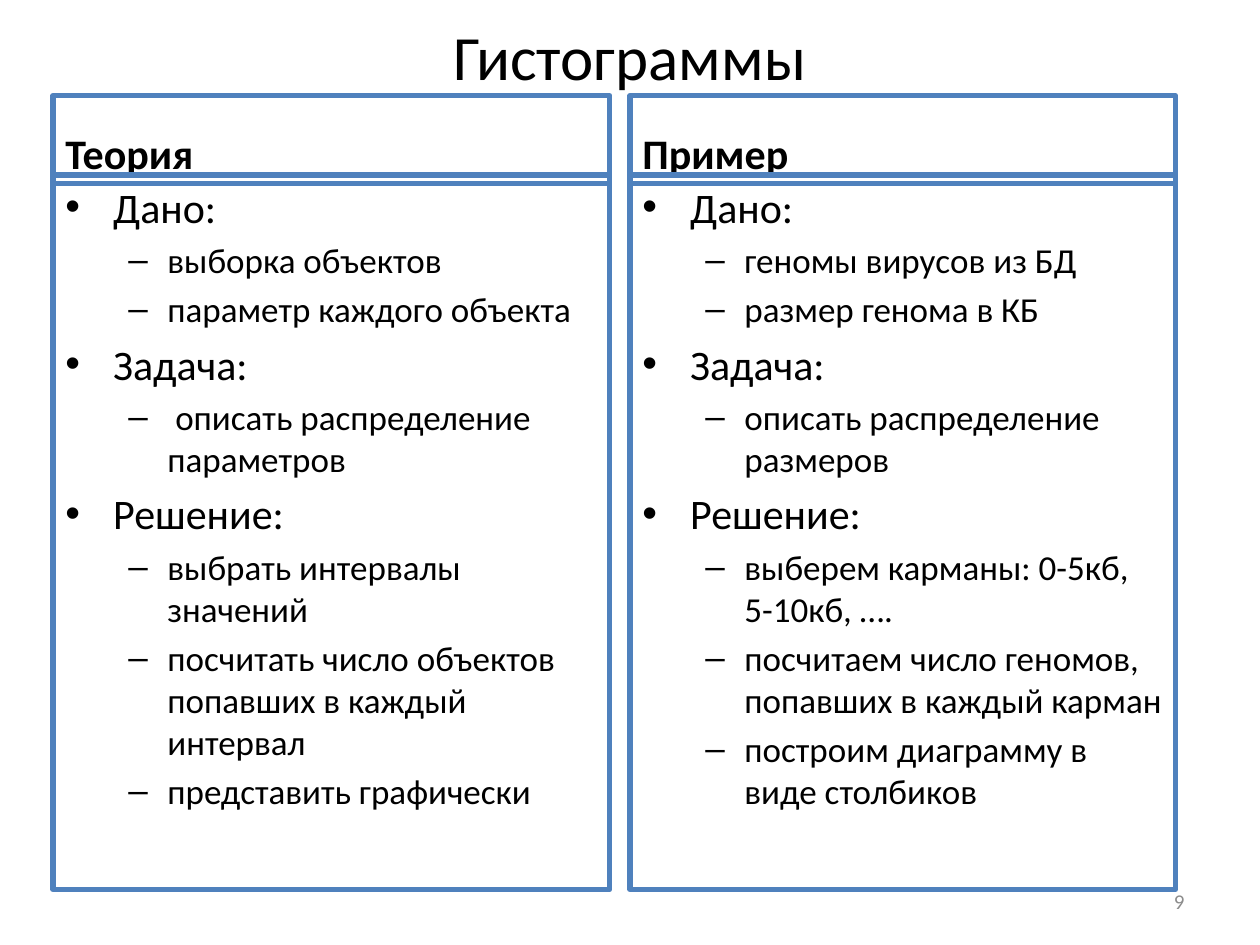
"""Build a slide comparing the theory of histograms with an example."""
from lxml.etree import SubElement
from pptx import Presentation
from pptx.dml.color import RGBColor
from pptx.enum.shapes import MSO_SHAPE
from pptx.enum.text import MSO_ANCHOR, PP_ALIGN
from pptx.oxml.ns import qn
from pptx.util import Inches, Pt

BLACK = RGBColor(0, 0, 0)
BLUE = RGBColor(0x4F, 0x81, 0xBD)
GRAY = RGBColor(0x8C, 0x8C, 0x8C)
FONT = "Calibri"

TITLE = "Гистограммы"
PAGE_NUMBER = "9"
COLUMNS = [
    (0.42, 4.42, "Теория", [
        ("Дано:", ["выборка объектов", "параметр каждого объекта"]),
        ("Задача:", [" описать распределение параметров"]),
        ("Решение:", [
            "выбрать интервалы значений",
            "посчитать число объектов попавших в каждый интервал",
            "представить графически",
        ]),
    ]),
    (5, 4.33, "Пример", [
        ("Дано:", ["геномы вирусов из БД", "размер генома в КБ"]),
        ("Задача:", ["описать распределение размеров"]),
        ("Решение:", [
            "выберем карманы: 0-5кб, 5-10кб, ….",
            "посчитаем число геномов, попавших в каждый карман",
            "построим диаграмму в виде столбиков",
        ]),
    ]),
]
HEADER_ROW = (0.76, 0.7)
BODY_ROW = (1.39, 5.67)
LEVELS = [("•", 24, 0.38, 0.38), ("–", 20, 0.81, 0.31)]
SPACE_SHARE = 0.2


def format_paragraph(paragraph, size, color=BLACK, bold=False, align=PP_ALIGN.LEFT):
    paragraph.alignment = align
    for span in paragraph.runs:
        span.font.name = FONT
        span.font.size = Pt(size)
        span.font.bold = bold
        span.font.color.rgb = color


def add_label(page, place, text, size, color, align):
    box = page.shapes.add_textbox(*map(Inches, place))
    frame = box.text_frame
    frame.word_wrap = True
    frame.vertical_anchor = MSO_ANCHOR.MIDDLE
    frame.text = text
    format_paragraph(frame.paragraphs[0], size, color, align=align)


def add_panel(page, left, width, row, anchor):
    top, height = row
    panel = page.shapes.add_shape(
        MSO_SHAPE.RECTANGLE, *map(Inches, (left, top, width, height)))
    panel.shadow.inherit = False
    panel.fill.background()
    panel.line.color.rgb = BLUE
    panel.line.width = Pt(3)
    panel.text_frame.word_wrap = True
    panel.text_frame.vertical_anchor = anchor
    return panel.text_frame


def format_bullet(paragraph, level):
    mark, size, margin, hanging = LEVELS[level]
    paragraph.level = level
    paragraph.space_before = Pt(size * SPACE_SHARE)
    format_paragraph(paragraph, size)
    properties = paragraph._p.get_or_add_pPr()
    properties.set("marL", str(Inches(margin)))
    properties.set("indent", str(-Inches(hanging)))
    SubElement(properties, qn("a:buFont"), typeface="Arial")
    SubElement(properties, qn("a:buChar"), char=mark)


def add_column(page, left, width, heading, sections):
    header = add_panel(page, left, width, HEADER_ROW, MSO_ANCHOR.BOTTOM)
    header.text = heading
    format_paragraph(header.paragraphs[0], 24, bold=True)

    body = add_panel(page, left, width, BODY_ROW, MSO_ANCHOR.TOP)
    lines = []
    for topic, points in sections:
        lines.append((topic, 0))
        lines.extend((point, 1) for point in points)
    body.text = "\n".join(text for text, level in lines)
    for paragraph, (text, level) in zip(body.paragraphs, lines):
        format_bullet(paragraph, level)


def main():
    deck = Presentation()
    deck.slide_width, deck.slide_height = Inches(10), Inches(7.5)
    page = deck.slides.add_slide(deck.slide_layouts[6])
    add_label(page, (0.5, 0.13, 9, 0.61), TITLE, 36, BLACK, PP_ALIGN.CENTER)
    for column in COLUMNS:
        add_column(page, *column)
    add_label(page, (7.17, 6.95, 2.33, 0.4), PAGE_NUMBER, 12, GRAY, PP_ALIGN.RIGHT)
    deck.save("out.pptx")


if __name__ == "__main__":
    main()
